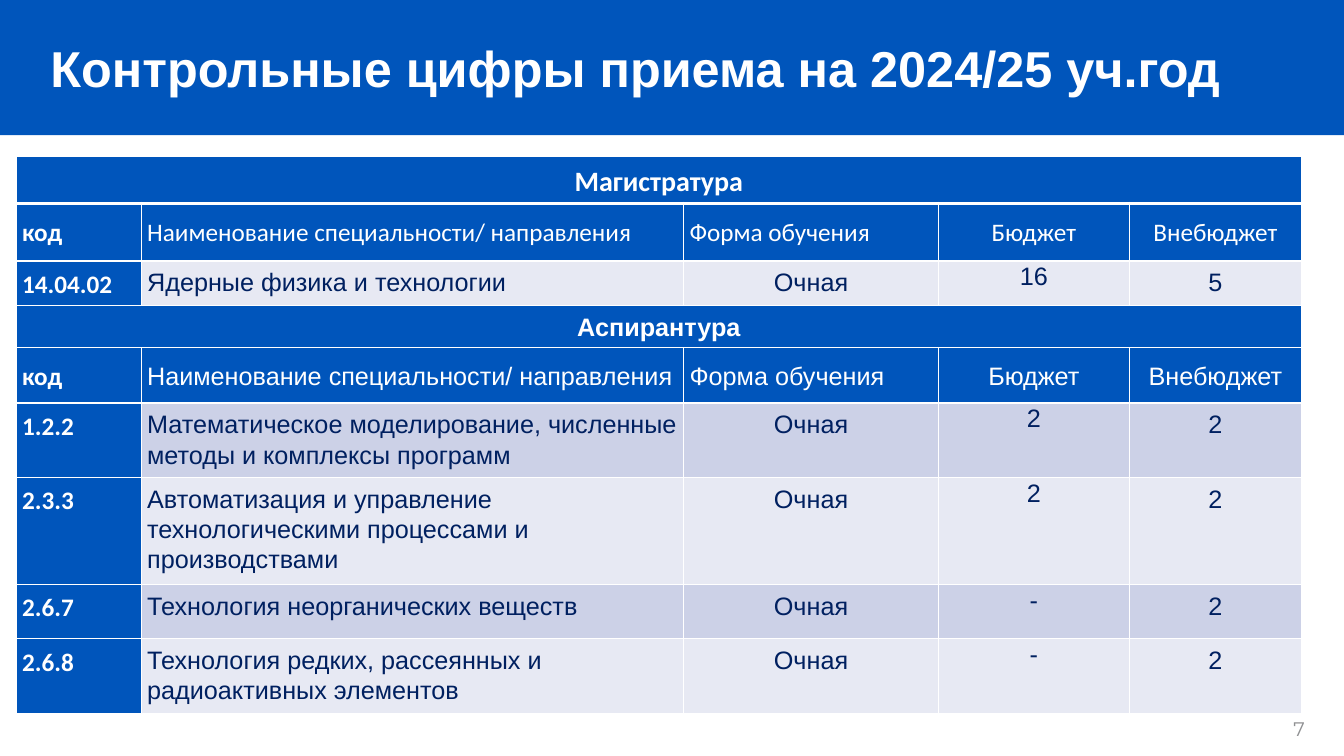
from lxml import etree
from pptx import Presentation
from pptx.dml.color import RGBColor
from pptx.enum.shapes import MSO_SHAPE
from pptx.enum.text import MSO_ANCHOR, PP_ALIGN
from pptx.oxml.ns import qn
from pptx.util import Inches, Pt

LEFT, CENTER = PP_ALIGN.LEFT, PP_ALIGN.CENTER
TOP, MIDDLE = MSO_ANCHOR.TOP, MSO_ANCHOR.MIDDLE
RECTANGLE = MSO_SHAPE.RECTANGLE

WIDTH, HEIGHT = 13.33, 7.5
BLUE, NAVY, WHITE, GRAY = "0055BB", "002060", "FFFFFF", "8F9092"
PALE, TINTED = "E7E9F3", "CCD1E7"

COLUMN_WIDTHS = [1.24, 5.38, 2.53, 1.89, 1.71]
ALIGNMENTS = [LEFT, LEFT, CENTER, CENTER, CENTER]
HEADER_ALIGNMENTS = [LEFT, LEFT, LEFT, CENTER, CENTER]
BUDGET_COLUMN = 3
HEADINGS = ["код", "Наименование специальности/ направления",
            "Форма обучения", "Бюджет", "Внебюджет"]

# Each level: name, font, name size, heights of its two head rows, programmes
# Each programme: row height, fill, code, name, budget places, paid places
LEVELS = [
    ("Магистратура", "Calibri", 20, (0.47, 0.57), [
        (0.44, PALE, "14.04.02", "Ядерные физика и технологии", "16", "5"),
    ]),
    ("Аспирантура", "Arial", 18, (0.42, 0.55), [
        (0.74, TINTED, "1.2.2",
         "Математическое моделирование, численные методы и комплексы программ", "2", "2"),
        (1.06, PALE, "2.3.3",
         "Автоматизация и управление технологическими процессами и производствами", "2", "2"),
        (0.54, TINTED, "2.6.7", "Технология неорганических веществ", "-", "2"),
        (0.74, PALE, "2.6.8",
         "Технология редких, рассеянных и радиоактивных элементов", "-", "2"),
    ]),
]


def rgb(value):
    return RGBColor.from_string(value)


def add_run(paragraph, text, font, size, color, bold=False):
    run = paragraph.add_run()
    run.text = text
    run.font.name, run.font.size, run.font.bold = font, Pt(size), bold
    run.font.color.rgb = rgb(color)


def add_title_band(slide, text, width, height):
    band = slide.shapes.add_shape(RECTANGLE, 0, 0, Inches(width), Inches(height))
    band.shadow.inherit = False
    band.fill.solid()
    band.fill.fore_color.rgb = rgb(BLUE)
    band.line.fill.background()

    title = slide.shapes.title
    title._element.addprevious(band._element)
    title.left, title.top = Inches(0.03 * width), Inches(0.23 * height)
    title.width, title.height = Inches(12.75), Inches(0.53 * height)
    title.text_frame.vertical_anchor = MIDDLE
    paragraph = title.text_frame.paragraphs[0]
    paragraph.alignment = LEFT
    add_run(paragraph, text, "Arial", 36, WHITE, True)


def set_borders(cell, top=1, bottom=1):
    properties = cell._tc.get_or_add_tcPr()
    for side, points in (("L", 1), ("R", 1), ("T", top), ("B", bottom)):
        line = etree.SubElement(properties, qn(f"a:ln{side}"), w=str(Pt(points)))
        fill = etree.SubElement(line, qn("a:solidFill"))
        etree.SubElement(fill, qn("a:srgbClr"), val=WHITE)


def fill_cell(cell, text, fill, font, color, bold=False, size=18, align=LEFT,
              anchor=TOP, inset=0.06, after=0):
    cell.fill.solid()
    cell.fill.fore_color.rgb = rgb(fill)
    cell.vertical_anchor = anchor
    cell.margin_left = cell.margin_right = cell.margin_top = Inches(inset)
    # A smaller bottom inset keeps full rows at their set height
    cell.margin_bottom = Inches(inset if anchor == MIDDLE else inset / 2)
    paragraph = cell.text_frame.paragraphs[0]
    paragraph.alignment = align
    paragraph.line_spacing = 1.07
    paragraph.space_after = Pt(after)
    add_run(paragraph, text, font, size, color, bold)


def fill_level(table, first_row, level):
    """Fill the rows of one level of study and return the next free row."""
    name, font, name_size, head_heights, programmes = level
    heights = [*head_heights, *(programme[0] for programme in programmes)]
    for row, height in enumerate(heights, first_row):
        table.rows[row].height = Inches(height)

    name_cell = table.cell(first_row, 0)
    name_cell.merge(table.cell(first_row, len(COLUMN_WIDTHS) - 1))
    fill_cell(name_cell, name, BLUE, font, WHITE, True, name_size, CENTER)

    for column, heading in enumerate(HEADINGS):
        is_code = column == 0
        fill_cell(table.cell(first_row + 1, column), heading, BLUE,
                  "Calibri" if is_code else font, WHITE, is_code,
                  align=HEADER_ALIGNMENTS[column], anchor=MIDDLE,
                  inset=0 if column == BUDGET_COLUMN else 0.06)

    for row, (_, fill, code, programme, budget, paid) in enumerate(programmes, first_row + 2):
        fill_cell(table.cell(row, 0), code, BLUE, "Calibri", WHITE, True, after=7.5)
        for column, text in enumerate([programme, "Очная", budget, paid], 1):
            fill_cell(table.cell(row, column), text, fill, "Arial", NAVY,
                      align=ALIGNMENTS[column], after=7.5,
                      inset=0 if column == BUDGET_COLUMN else 0.06)
    return first_row + len(heights)


def add_admission_table(slide, left, top, width, height):
    row_count = sum(2 + len(level[-1]) for level in LEVELS)
    table = slide.shapes.add_table(row_count, len(COLUMN_WIDTHS), Inches(left), Inches(top),
                                   Inches(width), Inches(height)).table
    for column, column_width in zip(table.columns, COLUMN_WIDTHS):
        column.width = Inches(column_width)
    for row in range(row_count):
        for column in range(len(COLUMN_WIDTHS)):
            set_borders(table.cell(row, column), top=3 if row == 1 else 1,
                        bottom=3 if row == 0 else 1)
    next_row = 0
    for level in LEVELS:
        next_row = fill_level(table, next_row, level)


def add_page_number(slide, text, left, top, width, height):
    box = slide.shapes.add_textbox(Inches(left), Inches(top), Inches(width), Inches(height))
    box.text_frame.word_wrap = False
    add_run(box.text_frame.paragraphs[0], text, "Montserrat", 14, GRAY)


def main():
    presentation = Presentation()
    presentation.slide_width, presentation.slide_height = Inches(WIDTH), Inches(HEIGHT)
    slide = presentation.slides.add_slide(presentation.slide_layouts.get_by_name("Title Only"))
    add_title_band(slide, "Контрольные цифры приема на 2024/25 уч.год", WIDTH, 1.34)
    add_admission_table(slide, 0.16, 1.55, sum(COLUMN_WIDTHS), 5.5)
    add_page_number(slide, "7", 12.73, 7.06, 0.45, 0.34)
    presentation.save("out.pptx")


if __name__ == "__main__":
    main()
